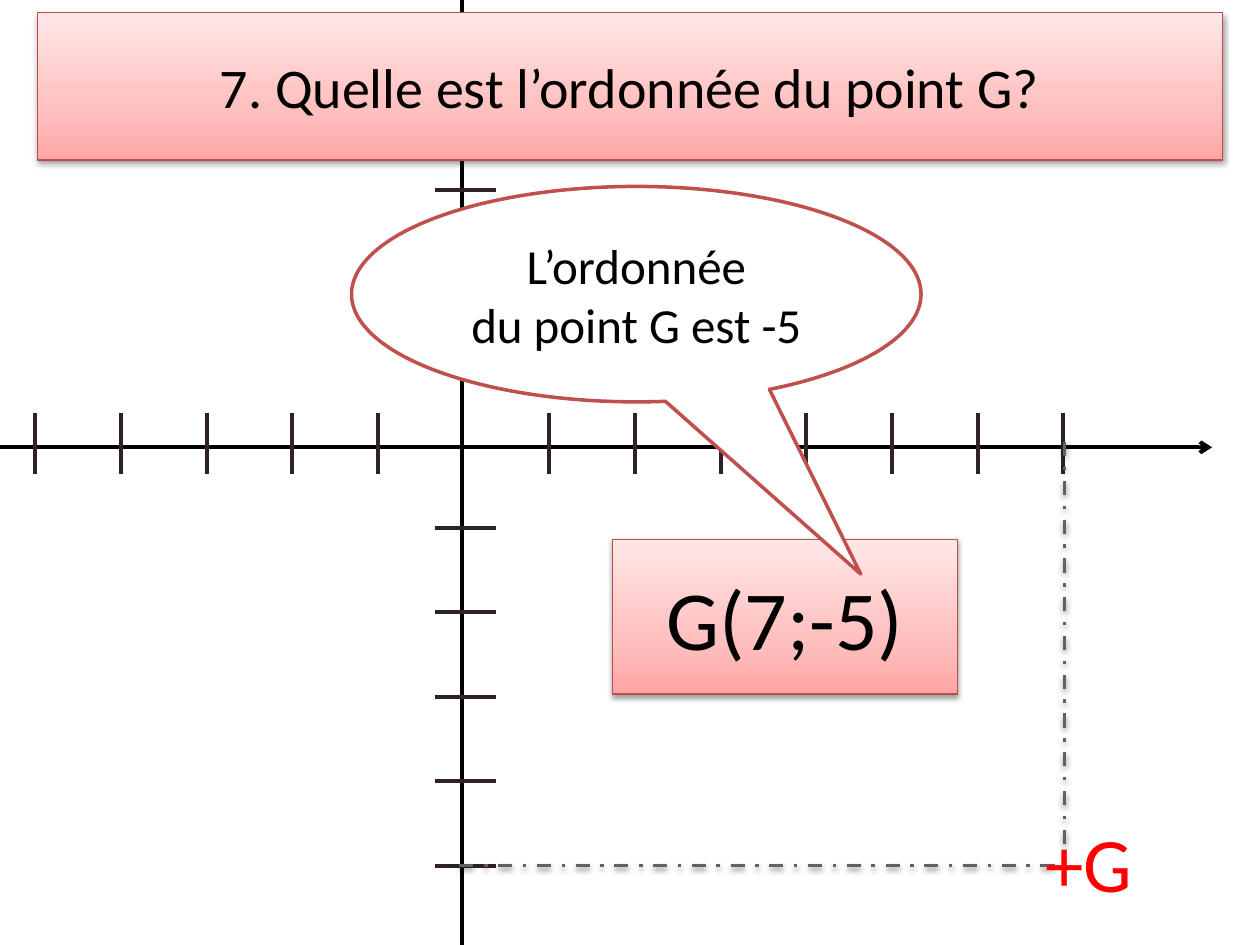
from copy import deepcopy

from lxml.etree import SubElement
from pptx import Presentation
from pptx.dml.color import RGBColor
from pptx.enum.dml import MSO_LINE
from pptx.enum.shapes import MSO_CONNECTOR, MSO_SHAPE
from pptx.enum.text import MSO_ANCHOR, MSO_AUTO_SIZE, PP_ALIGN
from pptx.oxml import parse_xml
from pptx.oxml.ns import qn
from pptx.util import Inches, Pt

SHADOW = (
    '<a:effectLst xmlns:a="http://schemas.openxmlformats.org/drawingml/2006/main">'
    '<a:outerShdw blurRad="40000" dist="20000" dir="5400000" rotWithShape="0">'
    '<a:srgbClr val="000000"><a:alpha val="38000"/></a:srgbClr>'
    '</a:outerShdw></a:effectLst>'
)


def color(hex_value):
    return RGBColor.from_string(hex_value)


def write_text(shape, text, size, ink="000000", align=PP_ALIGN.CENTER, anchor=MSO_ANCHOR.MIDDLE):
    frame = shape.text_frame
    frame.word_wrap = True
    frame.vertical_anchor = anchor
    frame.text = text
    for paragraph in frame.paragraphs:
        paragraph.alignment = align
        paragraph.font.name = "Calibri"
        paragraph.font.size = Pt(size)
        paragraph.font.color.rgb = color(ink)


presentation = Presentation()
presentation.slide_width = Inches(10)
presentation.slide_height = Inches(7.5)
slide = presentation.slides.add_slide(presentation.slide_layouts[5])
shapes = slide.shapes
title = shapes.title

# name: start x, start y, end x, end y, colour
axes = [(0, 3.55, 9.62, 3.55, "000000"), (3.67, 7.5, 3.67, 0, "000000")]
ticks = []
for step in range(-5, 8):
    if step != 0:
        x = 3.68 + 0.68 * step
        ticks.append((x, 3.28, x, 3.76, "2E2224"))
for step in range(-5, 6):
    if step != 0:
        y = 3.52 + 0.67 * step
        ticks.append((3.45, y, 3.94, y, "2E2224"))

axis_group = shapes.add_group_shape()
axis_lines = []
for x1, y1, x2, y2, ink in axes + ticks:
    line = axis_group.shapes.add_connector(
        MSO_CONNECTOR.STRAIGHT, Inches(x1), Inches(y1), Inches(x2), Inches(y2))
    line.line.color.rgb = color(ink)
    line.line.width = Pt(2.25)
    SubElement(line._element.spPr, qn("a:effectLst"))
    axis_lines.append(line)
SubElement(axis_lines[0].line._get_or_add_ln(), qn("a:tailEnd"), type="arrow")

shapes._spTree.append(title._element)
title.left, title.top = Inches(0.3), Inches(0.1)
title.width, title.height = Inches(9.4), Inches(1.17)
write_text(title, "7. Quelle est l’ordonnée du point G?", 32)

guides = []
for x1, y1, x2, y2 in [(8.45, 3.51, 8.45, 6.88), (8.37, 6.87, 3.63, 6.87)]:
    guide = shapes.add_connector(
        MSO_CONNECTOR.STRAIGHT, Inches(x1), Inches(y1), Inches(x2), Inches(y2))
    guide.line.color.rgb = color("61625E")
    guide.line.width = Pt(2)
    guide.line.dash_style = MSO_LINE.DASH_DOT
    guides.append(guide)

point_label = shapes.add_textbox(Inches(8.2), Inches(6.42), Inches(1.52), Inches(0.84))
write_text(point_label, "+G", 44, ink="FF0000", align=PP_ALIGN.LEFT, anchor=MSO_ANCHOR.TOP)
point_label.text_frame.auto_size = MSO_AUTO_SIZE.SHAPE_TO_FIT_TEXT

coordinates = shapes.add_shape(
    MSO_SHAPE.RECTANGLE, Inches(4.86), Inches(4.28), Inches(2.74), Inches(1.23))
write_text(coordinates, "G(7;-5)", 48)

for box in (title, coordinates):
    box.fill.gradient()
    box.fill.gradient_angle = 90
    stop_list = box._element.spPr.find(qn("a:gradFill")).find(qn("a:gsLst"))
    stop_list.append(deepcopy(stop_list[-1]))
    stops = [(0, "FFA6A5"), (0.35, "FFC0BF"), (1, "FFE7E7")]
    for stop, (position, ink) in zip(box.fill.gradient_stops, stops):
        stop.position = position
        stop.color.rgb = color(ink)
    box.line.color.rgb = color("BF4C48")
    box.line.width = Pt(0.75)

for shape in (title, coordinates, *guides):
    shape._element.spPr.append(parse_xml(SHADOW))

answer = shapes.add_shape(
    MSO_SHAPE.OVAL_CALLOUT, Inches(2.79), Inches(1.48), Inches(4.52), Inches(1.71))
answer.adjustments[0] = 0.394
answer.adjustments[1] = 1.299
answer.shadow.inherit = False
answer.fill.solid()
answer.fill.fore_color.rgb = color("FFFFFF")
answer.line.color.rgb = color("C0504D")
answer.line.width = Pt(2)
write_text(answer, "L’ordonnée\ndu point G est -5", 28)

presentation.save("out.pptx")
